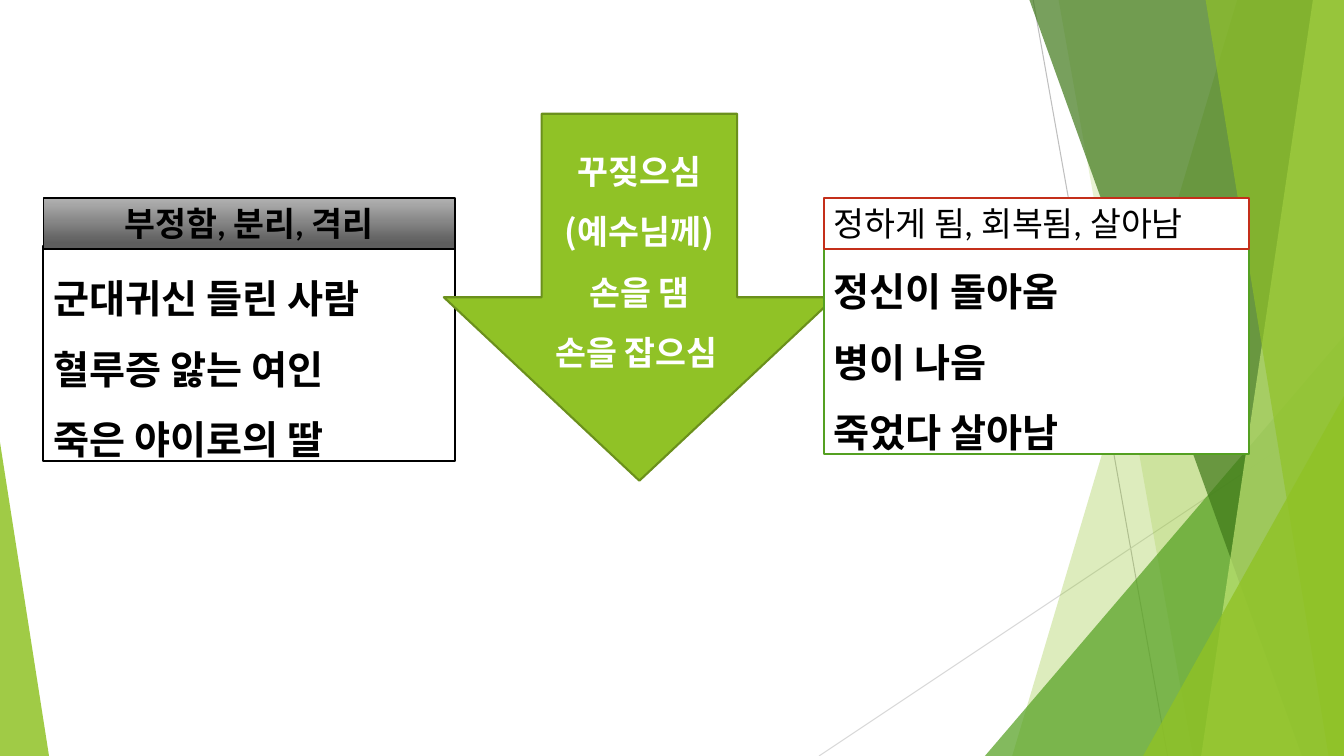
from lxml import etree
from pptx import Presentation
from pptx.dml.color import RGBColor
from pptx.enum.shapes import MSO_CONNECTOR, MSO_SHAPE
from pptx.enum.text import MSO_ANCHOR, PP_ALIGN
from pptx.oxml.ns import qn
from pptx.util import Pt

BLACK = RGBColor(0x00, 0x00, 0x00)
WHITE = RGBColor(0xFF, 0xFF, 0xFF)
LIME = RGBColor(0x90, 0xC2, 0x26)
LIME_EDGE = RGBColor(0x6B, 0x90, 0x1C)
PALE_LIME = RGBColor(0xC0, 0xE4, 0x74)
GREEN = RGBColor(0x54, 0xA0, 0x21)
DARK_GREEN = RGBColor(0x3F, 0x78, 0x19)
RED = RGBColor(0xC4, 0x2F, 0x1A)
GRAY = RGBColor(0xBF, 0xBF, 0xBF)
LIGHT_GRAY = RGBColor(0xD9, 0xD9, 0xD9)
HEADER_TOP = RGBColor(0xB2, 0xB2, 0xB2)
HEADER_BOTTOM = RGBColor(0x5E, 0x5E, 0x5E)
LATIN_FONT, KOREAN_FONT = "Lato", "Noto Sans CJK KR"
WIDTH, HEIGHT = 960, 540

# Content: each paragraph is a list of lines
BEFORE_TITLE = ["부정함, 분리, 격리"]
BEFORE = ["군대귀신 들린 사람", "혈루증 앓는 여인", "죽은 야이로의 딸"]
ACTIONS = ["꾸짖으심", "(예수님께) 손을 댐", "손을 잡으심"]
AFTER_TITLE = ["정하게 됨, 회복됨, 살아남"]
AFTER = ["정신이 돌아옴", "병이 나음", "죽었다 살아남"]

# Background: thin lines (start, end, colour)
THIN_LINES = [
    ((738, 0), (834, HEIGHT), GRAY),
    ((WIDTH, 290), (585, HEIGHT), LIGHT_GRAY),
]
# Bands reach the right edge: (top x, bottom x, colour, opacity %)
# Triangles stand on the bottom edge: (left, top, width, apex, colour, opacity %)
FACETS = [
    ("band", (884, 723, LIME, 30)),
    ("band", (756, 852, LIME, 20)),
    ("triangle", (703.5, 240, 256.5, 1, GREEN, 72)),
    ("band", (735, 930, DARK_GREEN, 70)),
    ("band", (938, 858, PALE_LIME, 70)),
    ("band", (861, 949, LIME, 65)),
    ("triangle", (816.5, 283, 143.5, 1, LIME, 80)),
    ("triangle", (0, 316, 35, 0, LIME, 85)),
]

# Panels: left, top, width, height
BEFORE_BOX = (31, 175.7, 294, 153.4)
BEFORE_HEADER = (31, 141.5, 294, 36.3)
ARROW_BOX = (317, 81.3, 279.4, 262.1)
AFTER_BOX = (588.5, 170.7, 304, 153.4)
AFTER_HEADER = (588.5, 141.5, 304, 36.3)

presentation = Presentation()
presentation.slide_width, presentation.slide_height = Pt(WIDTH), Pt(HEIGHT)
slide = presentation.slides.add_slide(presentation.slide_layouts[6])
shapes = slide.shapes


def style_facet(shape, color, opacity):
    shape.shadow.inherit = False
    shape.fill.solid()
    shape.fill.fore_color.rgb = color
    shape.line.fill.background()
    color_element = shape.fill._xPr.find(qn("a:solidFill"))[0]
    etree.SubElement(color_element, qn("a:alpha")).set("val", str(opacity * 1000))


def add_band(top_x, bottom_x, color, opacity):
    builder = shapes.build_freeform(top_x, -1, scale=Pt(1))
    builder.add_line_segments([(WIDTH, -1), (WIDTH, HEIGHT), (bottom_x, HEIGHT)])
    style_facet(builder.convert_to_shape(), color, opacity)


def add_triangle(left, top, width, apex, color, opacity):
    shape = shapes.add_shape(MSO_SHAPE.ISOSCELES_TRIANGLE, Pt(left), Pt(top),
                             Pt(width), Pt(HEIGHT - top))
    shape.adjustments[0] = apex
    style_facet(shape, color, opacity)


def add_run(paragraph, text, size, color, bold, font_name):
    run = paragraph.add_run()
    run.text = text
    run.font.size, run.font.bold = Pt(size), bold
    run.font.color.rgb = color
    run.font.name = font_name
    east_asian = etree.Element(qn("a:ea"))
    east_asian.set("typeface", KOREAN_FONT)
    run.font._rPr.find(qn("a:latin")).addnext(east_asian)


def add_panel(kind, box, lines, edge, size, fill=WHITE, color=BLACK, bold=True,
              align=PP_ALIGN.LEFT, spacing=1.5, anchor=MSO_ANCHOR.TOP,
              font_name=LATIN_FONT, edge_width=1.5, wrap=True):
    shape = shapes.add_shape(kind, *[Pt(length) for length in box])
    shape.shadow.inherit = False
    shape.fill.solid()
    shape.fill.fore_color.rgb = fill
    shape.line.color.rgb = edge
    shape.line.width = Pt(edge_width)
    frame = shape.text_frame
    frame.word_wrap = wrap
    frame.vertical_anchor = anchor
    for index, line in enumerate(lines):
        paragraph = frame.paragraphs[0] if index == 0 else frame.add_paragraph()
        paragraph.alignment = align
        paragraph.line_spacing = spacing
        add_run(paragraph, line, size, color, bold, font_name)
    return shape


# Background lines and facets
for start, end, color in THIN_LINES:
    line = shapes.add_connector(MSO_CONNECTOR.STRAIGHT,
                                *[Pt(value) for value in start + end])
    line.line.color.rgb = color
    line.line.width = Pt(0.75)
    etree.SubElement(line._element.spPr, qn("a:effectLst"))
for kind, values in FACETS:
    (add_band if kind == "band" else add_triangle)(*values)

# Before, the action arrow, and after
add_panel(MSO_SHAPE.RECTANGLE, BEFORE_BOX, BEFORE, BLACK, 28)
arrow = add_panel(MSO_SHAPE.DOWN_ARROW, ARROW_BOX, ACTIONS, LIME_EDGE, 24,
                  fill=LIME, color=WHITE, align=PP_ALIGN.CENTER,
                  anchor=MSO_ANCHOR.MIDDLE, font_name=KOREAN_FONT)
add_run(arrow.text_frame.paragraphs[-1], " ", 18, WHITE, False, KOREAN_FONT)
header = add_panel(MSO_SHAPE.RECTANGLE, BEFORE_HEADER, BEFORE_TITLE, BLACK, 24,
                   align=PP_ALIGN.CENTER, spacing=1, edge_width=1)
header.fill.gradient()
header.fill.gradient_angle = 270
stops = header.fill.gradient_stops
for stop, position, color in zip(stops, (0, 0.88), (HEADER_TOP, HEADER_BOTTOM)):
    stop.position = position
    stop.color.rgb = color
add_panel(MSO_SHAPE.RECTANGLE, AFTER_BOX, AFTER, GREEN, 28)
add_panel(MSO_SHAPE.RECTANGLE, AFTER_HEADER, AFTER_TITLE, RED, 24,
          bold=False, spacing=1, wrap=False)

presentation.save("out.pptx")
